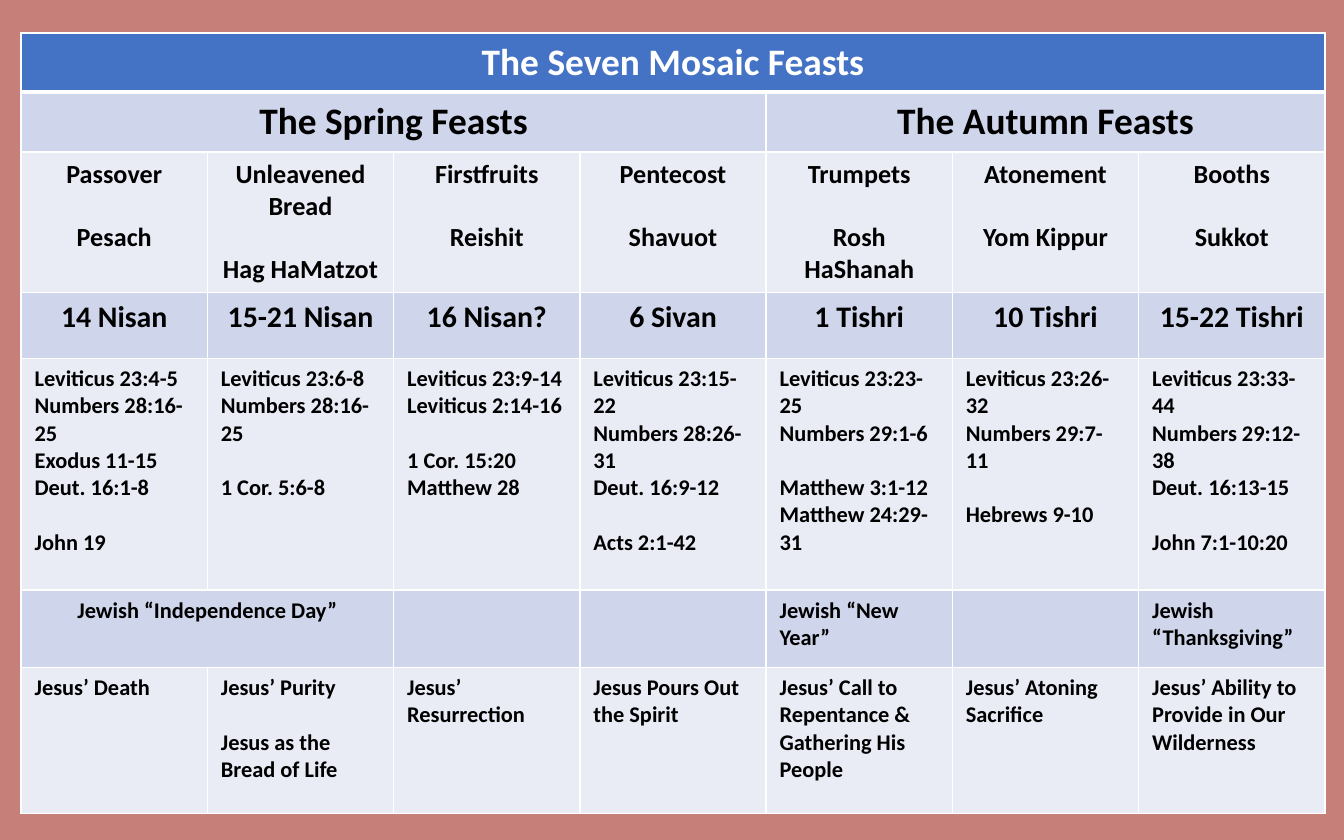
import pptx
import pptx.dml.color
import pptx.enum.text
import pptx.oxml
import pptx.oxml.ns
import pptx.util
import lxml.etree

Cm = pptx.util.Cm
Pt = pptx.util.Pt
RGB = pptx.dml.color.RGBColor.from_string
ALIGN = pptx.enum.text.PP_ALIGN

THEME = {
    "font": "Calibri",
    "background": "C78079", "border": "FFFFFF",
    "header": "4472C4", "band": "CFD5EA", "plain": "E9EBF5",
    "header_text": "FFFFFF", "text": "000000",
    "heading": 20, "date": 16, "name": 14, "body": 12,
    "thin": 1, "thick": 3, "line_height": 1.22,
}
COLUMN_COUNT = 7
COLUMN_WIDTH = 3.52

# Each row: height in cm, size, fill, centred, cells.
# None continues the cell to its left; a blank line opens a gap.
ROWS = [
    (1.1, "heading", "header", True,
     ["The Seven Mosaic Feasts"] + [None] * 6),
    (1.13, "heading", "band", True,
     ["The Spring Feasts", None, None, None, "The Autumn Feasts", None, None]),
    (2.65, "name", "plain", True,
     ["Passover\n\nPesach", "Unleavened Bread\n\nHag HaMatzot",
      "Firstfruits\n\nReishit", "Pentecost\n\nShavuot",
      "Trumpets\n\nRosh HaShanah", "Atonement\n\nYom Kippur",
      "Booths\n\nSukkot"]),
    (1.25, "date", "band", True,
     ["14 Nisan", "15-21 Nisan", "16 Nisan?", "6 Sivan", "1 Tishri",
      "10 Tishri", "15-22 Tishri"]),
    (4.38, "body", "plain", False,
     ["Leviticus 23:4-5\nNumbers 28:16-25\nExodus 11-15\nDeut. 16:1-8\n\nJohn 19",
      "Leviticus 23:6-8\nNumbers 28:16-25\n\n1 Cor. 5:6-8",
      "Leviticus 23:9-14\nLeviticus 2:14-16\n\n1 Cor. 15:20\nMatthew 28",
      "Leviticus 23:15-22\nNumbers 28:26-31\nDeut. 16:9-12\n\nActs 2:1-42",
      "Leviticus 23:23-25\nNumbers 29:1-6\n\nMatthew 3:1-12\nMatthew 24:29-31",
      "Leviticus 23:26-32\nNumbers 29:7-11\n\nHebrews 9-10",
      "Leviticus 23:33-44\nNumbers 29:12-38\nDeut. 16:13-15\n\nJohn 7:1-10:20"]),
    (1.46, "body", "band", False,
     ["Jewish “Independence Day”", None, "", "", "Jewish “New Year”", "",
      "Jewish “Thanksgiving”"]),
    (2.76, "body", "plain", False,
     ["Jesus’ Death", "Jesus’ Purity\n\nJesus as the Bread of Life",
      "Jesus’ Resurrection", "Jesus Pours Out the Spirit",
      "Jesus’ Call to Repentance & Gathering His People",
      "Jesus’ Atoning Sacrifice",
      "Jesus’ Ability to Provide in Our Wilderness"]),
]


def add_borders(cell, row_index):
    """Draw white cell edges, with a thick rule under the header row."""
    properties = cell._tc.get_or_add_tcPr()
    thick_edge = {0: "lnB", 1: "lnT"}.get(row_index)
    for edge in ("lnL", "lnR", "lnT", "lnB"):
        width = THEME["thick"] if edge == thick_edge else THEME["thin"]
        line = lxml.etree.SubElement(
            properties, pptx.oxml.ns.qn("a:" + edge), w=str(int(Pt(width))))
        fill = lxml.etree.SubElement(line, pptx.oxml.ns.qn("a:solidFill"))
        lxml.etree.SubElement(
            fill, pptx.oxml.ns.qn("a:srgbClr"), val=THEME["border"])


def write_text(cell, text, size, color, alignment):
    """Write one paragraph a line; blank lines become space before."""
    font_format = {"name": THEME["font"], "size": Pt(size), "bold": True}
    gap = False
    paragraph = None
    for line in text.split("\n"):
        if not line:
            gap = True
            continue
        if paragraph is None:
            paragraph = cell.text_frame.paragraphs[0]
        else:
            paragraph = cell.text_frame.add_paragraph()
        paragraph.alignment = alignment
        if gap:
            paragraph.space_before = Pt(round(size * THEME["line_height"], 1))
            gap = False
        run = paragraph.add_run()
        run.text = line
        for attribute, value in font_format.items():
            setattr(run.font, attribute, value)
        run.font.color.rgb = RGB(color)


# Slide and background
presentation = pptx.Presentation()
presentation.slide_width = Cm(25.4)
presentation.slide_height = Cm(15.88)
slide = presentation.slides.add_slide(presentation.slide_layouts[6])
slide.background.fill.solid()
slide.background.fill.fore_color.rgb = RGB(THEME["background"])

# Table grid
table = slide.shapes.add_table(
    len(ROWS), COLUMN_COUNT, Cm(0.4), Cm(0.62),
    Cm(COLUMN_WIDTH * COLUMN_COUNT), Cm(sum(row[0] for row in ROWS))).table
for column in table.columns:
    column.width = Cm(COLUMN_WIDTH)

# Cells
for row_index, (height, size_key, fill_key, centred, texts) in enumerate(ROWS):
    table.rows[row_index].height = Cm(height)
    color = THEME["header_text" if fill_key == "header" else "text"]
    for column_index, text in enumerate(texts):
        cell = table.cell(row_index, column_index)
        add_borders(cell, row_index)
        cell.fill.solid()
        cell.fill.fore_color.rgb = RGB(THEME[fill_key])
        if text is None:
            continue
        last = column_index
        while last + 1 < COLUMN_COUNT and texts[last + 1] is None:
            last += 1
        if last > column_index:
            cell.merge(table.cell(row_index, last))
        alignment = ALIGN.CENTER if centred or last > column_index else ALIGN.LEFT
        write_text(cell, text, THEME[size_key], color, alignment)

presentation.save("out.pptx")
